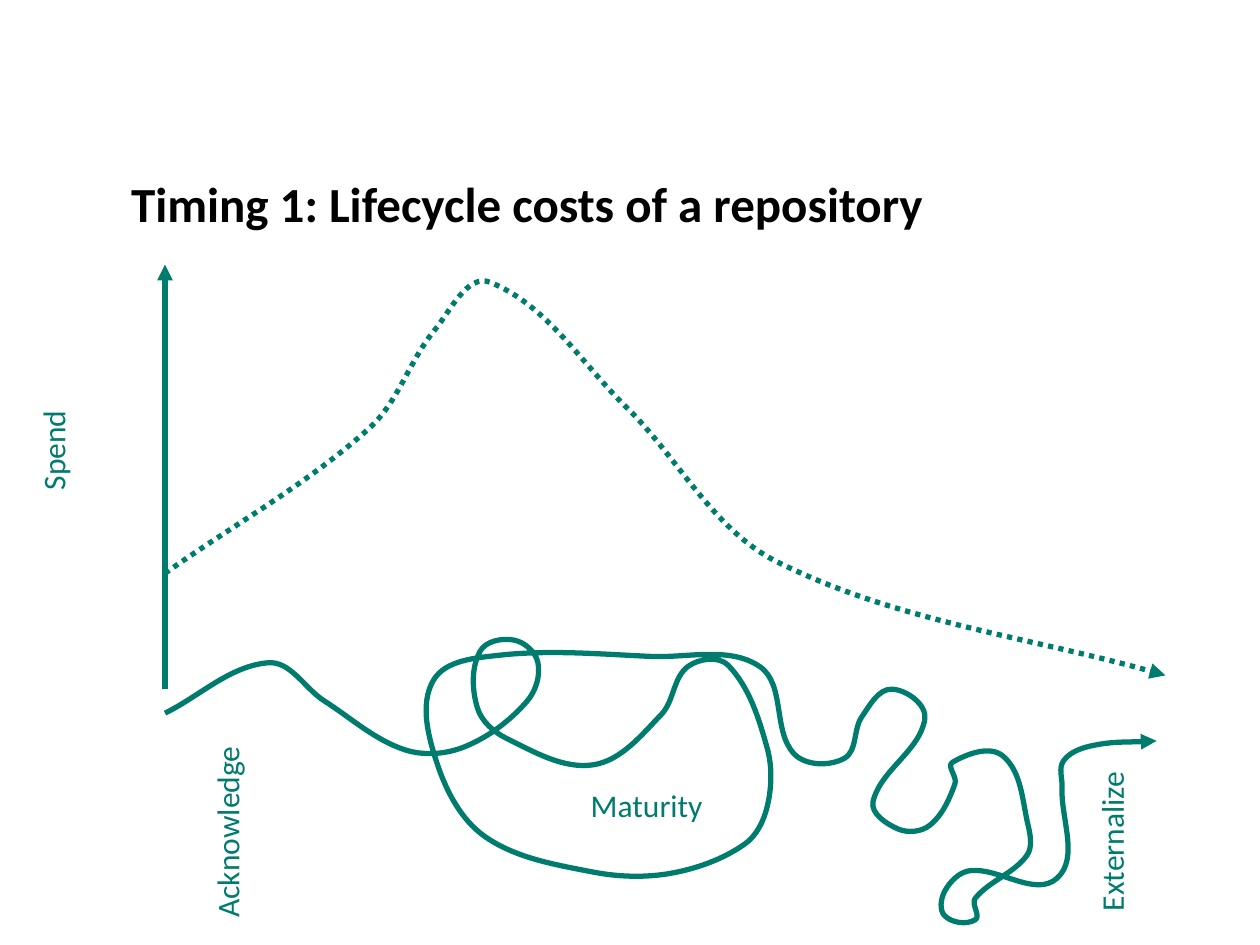
from dataclasses import dataclass
from math import dist

from lxml.etree import SubElement
from pptx import Presentation
from pptx.dml.color import RGBColor
from pptx.enum.dml import MSO_LINE
from pptx.enum.shapes import MSO_CONNECTOR, MSO_SHAPE
from pptx.enum.text import MSO_ANCHOR, MSO_AUTO_SIZE, PP_ALIGN
from pptx.oxml.ns import qn
from pptx.util import Inches, Pt


@dataclass(frozen=True)
class Theme:
    font: str = "Calibri"
    ink: RGBColor = RGBColor.from_string("000000")
    accent: RGBColor = RGBColor.from_string("007C6F")
    paper: RGBColor = RGBColor.from_string("FFFFFF")
    title_size: int = 28
    label_size: int = 18
    stroke: int = 3


THEME = Theme()

# Content: all lengths in inches
TITLE = ("Timing 1: Lifecycle costs of a repository", (0.94, 1.33, 6.56, 0.57))
LABEL_HEIGHT = 0.4
LABELS = [  # text, left, top and width before turning, rotation
    ("Spend", 0, 3.37, 0.84, 270),
    ("Maturity", 4.59, 6.19, 1.1, 0),
    ("Acknowledge", 1.01, 6.39, 1.58, 270),
    ("Externalize", 8.16, 6.47, 1.32, 270),
]
SPEND_AXIS = (1.31, 5.81, 1.31, 2.1)
AXIS_FOOT_COVER = (1.06, 5.48, 8.43, 0.32)
SPEND_CURVE = [
    (1.31, 4.55), (2.93, 3.4), (3.45, 2.62), (3.89, 2.24),
    (4.97, 3.23), (6.17, 4.46), (9.25, 5.36),
]
LIFECYCLE_PATH = [
    # Acknowledge: first hill and dip
    (1.31, 5.66), (2.13, 5.26), (2.57, 5.56), (3.21, 5.95), (3.68, 5.93),
    # Small loop
    (4.18, 5.57), (4.27, 5.26), (4.08, 5.08), (3.81, 5.17), (3.79, 5.62),
    (4.02, 5.86), (4.71, 6.07), (5.25, 5.67), (5.46, 5.29), (5.78, 5.28),
    # Maturity: large loop
    (6.09, 5.94), (6.09, 6.4), (5.91, 6.7), (5.33, 6.93), (4.7, 6.92),
    (3.85, 6.64), (3.47, 6.06), (3.44, 5.4), (3.97, 5.2), (5.17, 5.21),
    (6.03, 5.29),
    # Bends after maturity
    (6.3, 5.98), (6.7, 6.02), (6.84, 5.69), (7.08, 5.47), (7.34, 5.71),
    (6.93, 6.36), (7.13, 6.58), (7.38, 6.55), (7.58, 6.22), (7.56, 6.05),
    (7.96, 6),
    # Externalize: small box and final rise
    (8.16, 6.55), (8.15, 6.79), (7.74, 7.13), (7.74, 7.3), (7.5, 7.27),
    (7.5, 7.07), (7.7, 6.91), (8.39, 6.97), (8.43, 6.25), (8.44, 6.04),
    (8.66, 5.92), (9.18, 5.88),
]


def write(text_frame, text, size, color, bold=False):
    text_frame.word_wrap = False
    text_frame.auto_size = MSO_AUTO_SIZE.SHAPE_TO_FIT_TEXT
    text_frame.vertical_anchor = MSO_ANCHOR.TOP
    paragraph = text_frame.paragraphs[0]
    paragraph.alignment = PP_ALIGN.LEFT
    run = paragraph.add_run()
    run.text = text
    run.font.name, run.font.size, run.font.bold = THEME.font, Pt(size), bold
    run.font.color.rgb = color


def style_arrow(shape, dash=None):
    shape.line.color.rgb = THEME.accent
    shape.line.width = Pt(THEME.stroke)
    if dash:
        shape.line.dash_style = dash
    properties = shape._element.spPr
    SubElement(properties.find(qn("a:ln")), qn("a:tailEnd"), type="triangle")
    if properties.find(qn("a:effectLst")) is None:
        SubElement(properties, qn("a:effectLst"))


def bezier_segments(knots):
    """Yield two handles and an end point for each span of a smooth curve."""
    directions = []
    for before, after in zip(knots[:1] + knots[:-1], knots[1:] + knots[-1:]):
        length = dist(before, after)
        directions.append([(b - a) / length for a, b in zip(before, after)])
    for index, (start, end) in enumerate(zip(knots, knots[1:])):
        reach = dist(start, end) / 3
        yield (
            [p + reach * d for p, d in zip(start, directions[index])],
            [p - reach * d for p, d in zip(end, directions[index + 1])],
            end,
        )


def add_smooth_arrow(shapes, points, dash=None):
    knots = [(Inches(x), Inches(y)) for x, y in points]
    builder = shapes.build_freeform(*knots[0])
    builder.add_line_segments(knots[1:], close=False)
    shape = builder.convert_to_shape()
    # Turn each straight span into a curved one
    spans = list(shape._element.iter(qn("a:lnTo")))
    for span, segment in zip(spans, bezier_segments(knots)):
        span.tag = qn("a:cubicBezTo")
        span.remove(span[0])
        for x, y in segment:
            SubElement(span, qn("a:pt"), x=str(round(x - shape.left)), y=str(round(y - shape.top)))
    shape.fill.background()
    shape.shadow.inherit = False
    style_arrow(shape, dash)


def main():
    presentation = Presentation()
    presentation.slide_width, presentation.slide_height = Inches(10), Inches(7.5)
    slide = presentation.slides.add_slide(presentation.slide_layouts[5])
    shapes = slide.shapes

    # Title
    text, frame = TITLE
    title = shapes.title
    title.left, title.top, title.width, title.height = map(Inches, frame)
    write(title.text_frame, text, THEME.title_size, THEME.ink, bold=True)

    # Spend axis and curve
    axis = shapes.add_connector(MSO_CONNECTOR.STRAIGHT, *map(Inches, SPEND_AXIS))
    style_arrow(axis)
    add_smooth_arrow(shapes, SPEND_CURVE, MSO_LINE.ROUND_DOT)

    # White band that ends the axis above the lifecycle path
    cover = shapes.add_shape(MSO_SHAPE.RECTANGLE, *map(Inches, AXIS_FOOT_COVER))
    cover.shadow.inherit = False
    cover.fill.solid()
    cover.fill.fore_color.rgb = cover.line.color.rgb = THEME.paper
    cover.line.width = Pt(2)

    # Labels and lifecycle path
    for text, left, top, width, rotation in LABELS:
        label = shapes.add_textbox(*map(Inches, (left, top, width, LABEL_HEIGHT)))
        label.rotation = rotation
        write(label.text_frame, text, THEME.label_size, THEME.accent)
    add_smooth_arrow(shapes, LIFECYCLE_PATH)

    presentation.save("out.pptx")


if __name__ == "__main__":
    main()
